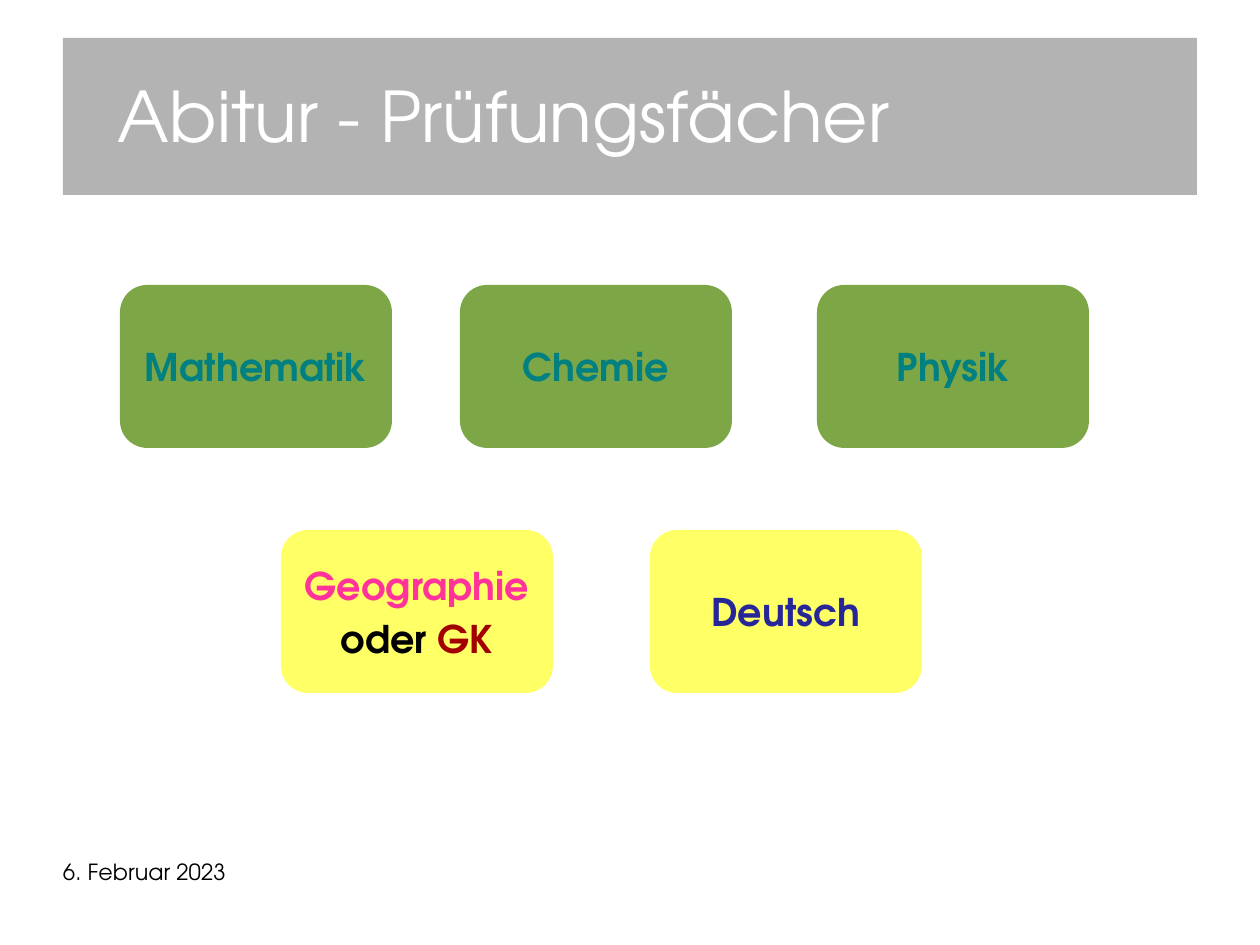
"""Build the slide listing the Abitur examination subjects."""
from dataclasses import dataclass

from pptx import Presentation
from pptx.dml.color import RGBColor
from pptx.enum.shapes import MSO_SHAPE
from pptx.enum.text import MSO_ANCHOR, MSO_AUTO_SIZE, PP_ALIGN
from pptx.util import Emu, Pt

ROUNDED = MSO_SHAPE.ROUNDED_RECTANGLE
MIDDLE, TOP = MSO_ANCHOR.MIDDLE, MSO_ANCHOR.TOP
CENTER, LEFT = PP_ALIGN.CENTER, PP_ALIGN.LEFT
NO_AUTOFIT = MSO_AUTO_SIZE.NONE

EMU_PER_PX = 8000
FONT = "TeX Gyre Adventor"
TITLE_ONLY_LAYOUT = 5
CARD_WIDTH, CARD_HEIGHT = 272, 163
ADVANCED_TOP, BASIC_TOP = 285, 530
COLORS = {
    "banner": "B3B3B3",
    "white": "FFFFFF",
    "black": "000000",
    "green": "7DA647",
    "yellow": "FFFF66",
    "teal": "008080",
    "pink": "FF3399",
    "red": "A20000",
    "blue": "262699",
}


@dataclass(frozen=True)
class Word:
    """A piece of text in one colour."""
    text: str
    color: str


@dataclass(frozen=True)
class SubjectCard:
    """A rounded card with one or more lines of words."""
    left: int
    top: int
    fill: str
    lines: tuple[tuple[Word, ...], ...]


CARDS = (
    SubjectCard(120, ADVANCED_TOP, "green", ((Word("Mathematik", "teal"),),)),
    SubjectCard(460, ADVANCED_TOP, "green", ((Word("Chemie", "teal"),),)),
    SubjectCard(817, ADVANCED_TOP, "green", ((Word("Physik", "teal"),),)),
    SubjectCard(281, BASIC_TOP, "yellow", (
        (Word("Geographie", "pink"),),
        (Word("oder ", "black"), Word("GK", "red")),
    )),
    SubjectCard(650, BASIC_TOP, "yellow", ((Word("Deutsch", "blue"),),)),
)


def px(length: int) -> Emu:
    """Turn pixels into EMU."""
    return Emu(length * EMU_PER_PX)


def rgb(name: str) -> RGBColor:
    """Look up a named colour."""
    return RGBColor.from_string(COLORS[name])


def format_font(font, size: int, color: str, bold: bool = False) -> None:
    """Set the typeface, size, colour and weight of a font."""
    font.name = FONT
    font.size = Pt(size)
    font.bold = bold
    font.color.rgb = rgb(color)


def format_frame(text_frame, anchor, wrap: bool, left: int = 0, top: int = 0, right: int = 0) -> None:
    """Set the anchor, wrapping and insets of a text frame."""
    text_frame.auto_size = NO_AUTOFIT
    text_frame.word_wrap = wrap
    text_frame.vertical_anchor = anchor
    text_frame.margin_left, text_frame.margin_right = px(left), px(right)
    text_frame.margin_top, text_frame.margin_bottom = px(top), px(0)


def write_line(text_frame, text: str, size: int, color: str) -> None:
    """Write one left-aligned line into a text frame."""
    text_frame.text = text
    paragraph = text_frame.paragraphs[0]
    paragraph.alignment = LEFT
    paragraph.line_spacing = 0.93
    format_font(paragraph.runs[0].font, size, color)


def draw_title(slide) -> None:
    """Place and format the title banner."""
    title = slide.shapes.title
    title.left, title.top = px(63), px(38)
    title.width, title.height = px(1134), px(157)
    title.fill.solid()
    title.fill.fore_color.rgb = rgb("banner")
    format_frame(title.text_frame, MIDDLE, True, left=55, top=5, right=23)
    write_line(title.text_frame, "Abitur - Prüfungsfächer", 44, "white")


def draw_card(slide, card: SubjectCard) -> None:
    """Draw a subject card with its words."""
    shape = slide.shapes.add_shape(
        ROUNDED, px(card.left), px(card.top), px(CARD_WIDTH), px(CARD_HEIGHT))
    shape.adjustments[0] = 0.167
    shape.shadow.inherit = False
    shape.fill.solid()
    shape.fill.fore_color.rgb = rgb(card.fill)
    shape.line.fill.background()
    text_frame = shape.text_frame
    format_frame(text_frame, MIDDLE, False)
    for index, words in enumerate(card.lines):
        paragraph = text_frame.add_paragraph() if index else text_frame.paragraphs[0]
        paragraph.alignment = CENTER
        if index:
            paragraph.space_before = Pt(4.5)
        for word in words:
            run = paragraph.add_run()
            run.text = word.text
            format_font(run.font, 24, word.color, bold=True)


def draw_date(slide) -> None:
    """Write the date at the bottom left."""
    box = slide.shapes.add_textbox(px(63), px(861), px(294), px(65))
    format_frame(box.text_frame, TOP, True)
    write_line(box.text_frame, "6. Februar 2023", 14, "black")


def main() -> None:
    """Build and save the presentation."""
    presentation = Presentation()
    presentation.slide_width, presentation.slide_height = px(1260), px(945)
    slide = presentation.slides.add_slide(presentation.slide_layouts[TITLE_ONLY_LAYOUT])
    draw_title(slide)
    for card in CARDS:
        draw_card(slide, card)
    draw_date(slide)
    presentation.save("out.pptx")


if __name__ == "__main__":
    main()
